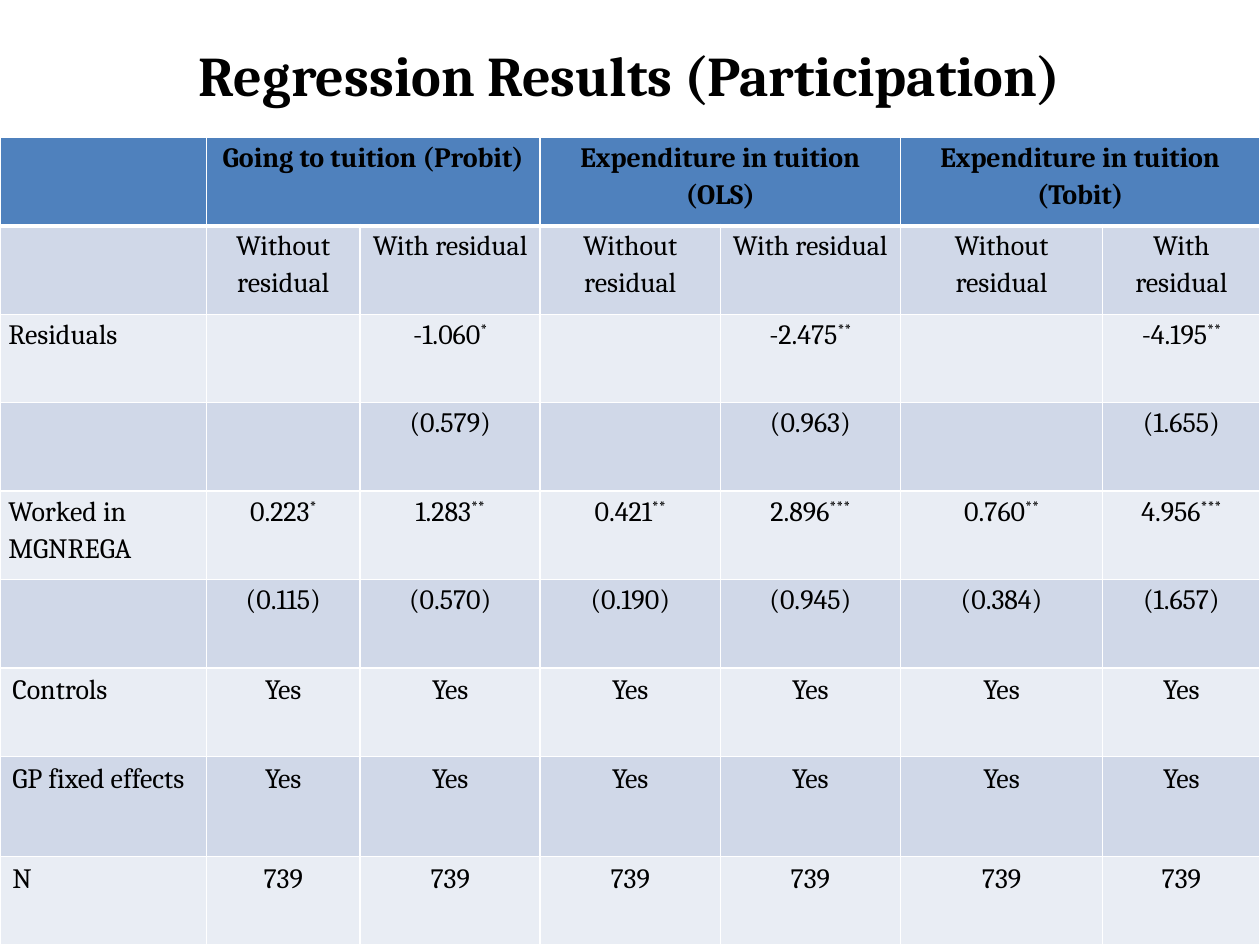
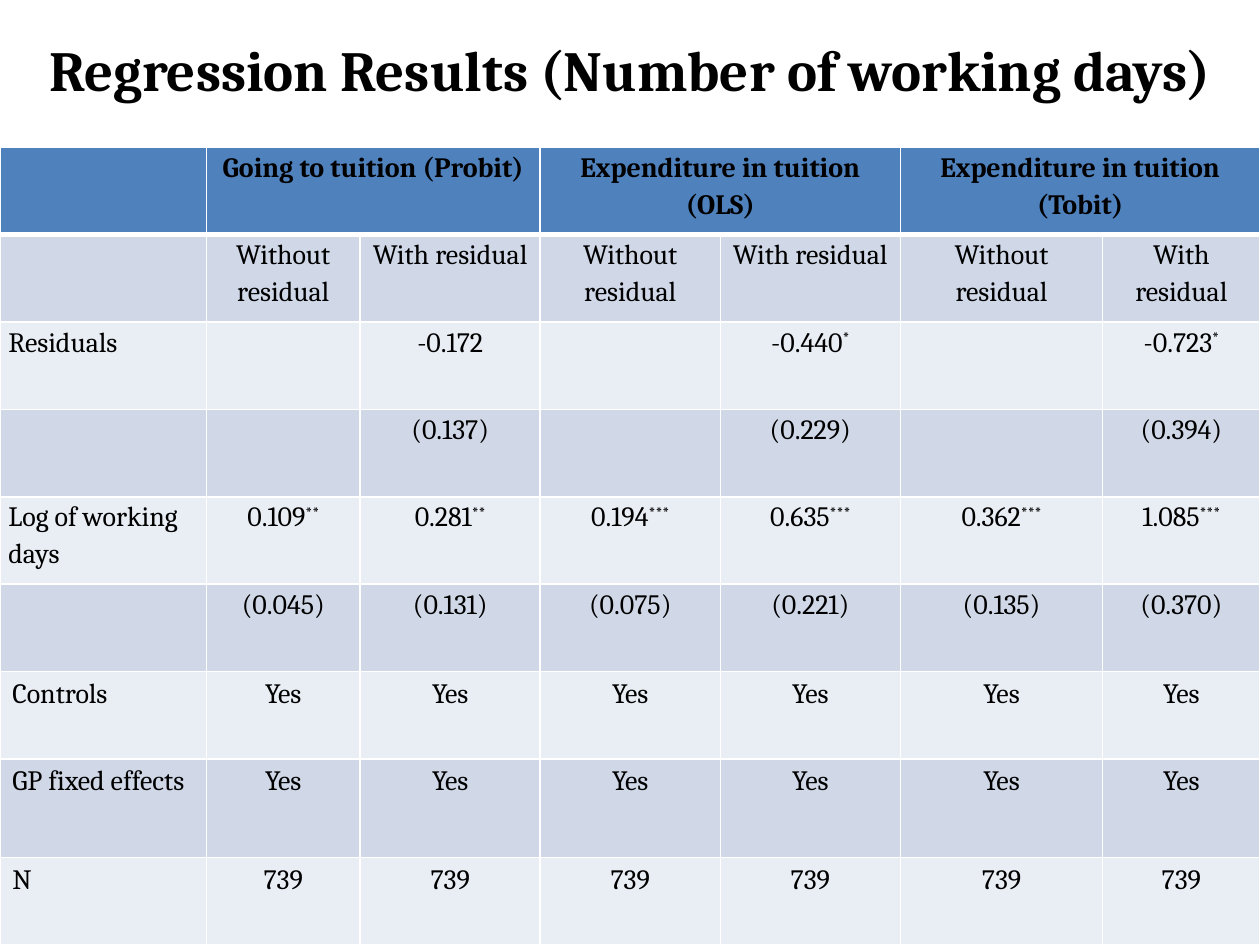
"""Build two slides of regression results, each a title over a full-width table."""
from pptx import Presentation, util as u
from pptx.dml.color import RGBColor
from pptx.enum import text
from pptx.oxml import parse_xml
from pptx.oxml.ns import nsdecls

MODELS = ["Going to tuition (Probit)", "Expenditure in tuition (OLS)",
          "Expenditure in tuition (Tobit)"]
HEAD = [
    [""] + [cell for model in MODELS for cell in (model, "")],
    [""] + ["Without residual", "With residual"] * 3,
]
FOOT = [["Controls"] + ["Yes"] * 6, ["GP fixed effects"] + ["Yes"] * 6, ["N"] + ["739"] * 6]

SLIDES = [
    {
        "title": "Regression Results (Participation)", "size": 32,
        "title_top": -0.2, "title_height": 3.38, "table_top": 2.77,
        "estimates": [
            ["Residuals", "", "-1.060*", "", "-2.475**", "", "-4.195**"],
            ["", "", "(0.579)", "", "(0.963)", "", "(1.655)"],
            ["Worked in MGNREGA", "0.223*", "1.283**", "0.421**", "2.896***", "0.760**", "4.956***"],
            ["", "(0.115)", "(0.570)", "(0.190)", "(0.945)", "(0.384)", "(1.657)"],
        ],
    },
    {
        "title": "Regression Results (Number of working days)", "size": 32.4,
        "title_top": 0, "title_height": 2.77, "table_top": 2.97,
        "estimates": [
            ["Residuals", "", "-0.172", "", "-0.440*", "", "-0.723*"],
            ["", "", "(0.137)", "", "(0.229)", "", "(0.394)"],
            ["Log of working days", "0.109**", "0.281**", "0.194***", "0.635***", "0.362***", "1.085***"],
            ["", "(0.045)", "(0.131)", "(0.075)", "(0.221)", "(0.135)", "(0.370)"],
        ],
    },
]

WIDTH, HEIGHT = 25.4, 19.05
COLS = [4.16, 3.1, 3.63, 3.63, 3.63, 4.08, 3.17]
ROW_WEIGHTS = [1] * 7 + [1.13, 1]
FONT, BLACK, WHITE = "Cambria", "000000", "FFFFFF"
HEADER, BANDS = "4F81BD", ["E9EDF4", "D0D8E8"]


def rgb(value):
    return RGBColor.from_string(value)


def style(p, size, bold, align):
    p.alignment = align
    f = p.font
    f.name, f.size, f.bold = FONT, u.Pt(size), bold
    f.color.rgb = rgb(BLACK)


def add_title(s, item):
    sp = s.shapes.add_textbox(0, u.Cm(item["title_top"]), u.Cm(WIDTH), u.Cm(item["title_height"]))
    tf = sp.text_frame
    tf.word_wrap = True
    tf.vertical_anchor = text.MSO_ANCHOR.MIDDLE
    p = tf.paragraphs[0]
    p.text = item["title"]
    style(p, item["size"], True, text.PP_ALIGN.CENTER)


def set_borders(cell, bottom):
    for side, width in {"L": 1, "R": 1, "T": 1, "B": bottom}.items():
        cell._tc.get_or_add_tcPr().append(parse_xml(
            f'<a:ln{side} {nsdecls("a")} w="{u.Pt(width)}"><a:solidFill>'
            f'<a:srgbClr val="{WHITE}"/></a:solidFill></a:ln{side}>'))


def fill_cell(cell, value, row, col, is_foot):
    is_head = row == 0
    set_borders(cell, 3 if is_head else 1)
    cell.fill.solid()
    cell.fill.fore_color.rgb = rgb(HEADER if is_head else BANDS[row % 2])
    side, edge = (0.25, 0.13) if is_foot else (0.17, 0)
    cell.margin_left = cell.margin_right = u.Cm(side)
    cell.margin_top = cell.margin_bottom = u.Cm(edge)
    p = cell.text_frame.paragraphs[0]
    style(p, 16, is_head, text.PP_ALIGN.CENTER if col else text.PP_ALIGN.LEFT)
    if not is_foot:
        p.line_spacing = 1.15
    number = value.rstrip("*")
    stars = value[len(number):]
    if number:
        p.add_run().text = number
    if stars:
        r = p.add_run()
        r.text = stars
        r.font._element.set("baseline", "30000")


def add_results(s, item):
    rows = HEAD + item["estimates"] + FOOT
    height = HEIGHT - item["table_top"]
    table = s.shapes.add_table(len(rows), len(COLS), 0, u.Cm(item["table_top"]),
                               u.Cm(WIDTH), u.Cm(height)).table
    for column, width in zip(table.columns, COLS):
        column.width = u.Cm(width)
    for row, weight in zip(table.rows, ROW_WEIGHTS):
        row.height = u.Cm(height * weight / sum(ROW_WEIGHTS))
    for i, values in enumerate(rows):
        for j, value in enumerate(values):
            fill_cell(table.cell(i, j), value, i, j, i >= len(rows) - len(FOOT))
    for j in range(1, len(COLS), 2):
        table.cell(0, j).merge(table.cell(0, j + 1))


def main():
    prs = Presentation()
    prs.slide_width, prs.slide_height = u.Cm(WIDTH), u.Cm(HEIGHT)
    for item in SLIDES:
        s = prs.slides.add_slide(prs.slide_layouts[6])
        add_title(s, item)
        add_results(s, item)
    prs.save("out.pptx")


if __name__ == "__main__":
    main()
